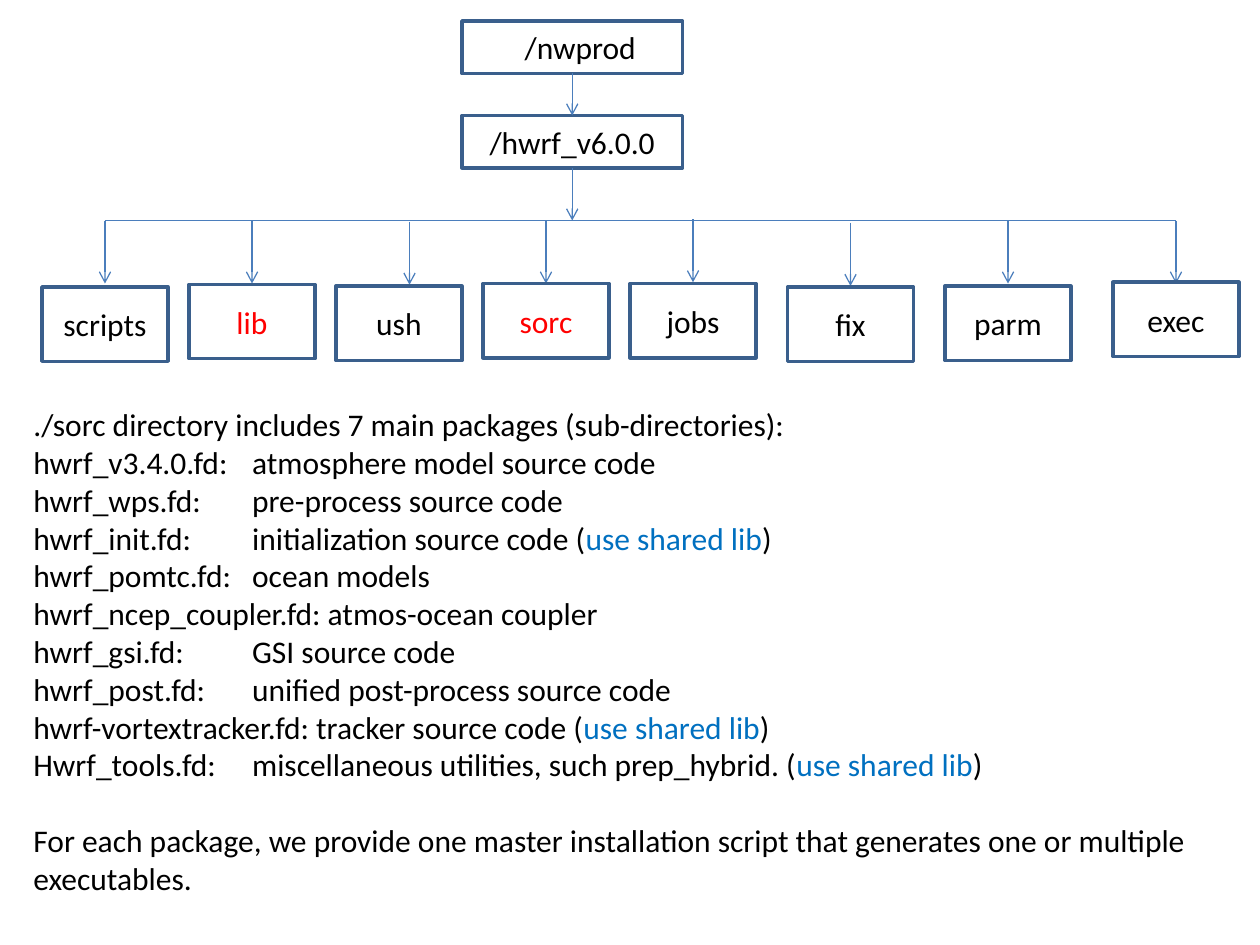
from pptx import Presentation
from pptx.enum import shapes, text
from pptx.dml.color import RGBColor
from pptx.oxml.ns import qn
from pptx.util import Pt
from lxml import etree

INK = {"text": "000000", "key": "FF0000", "note": "0070C0",
       "edge": "3A5F8C", "wire": "4B7EBC", "fill": "FFFFFF"}
FONT, SIZE, LINE = "Calibri", 18, 21.6

ROOTS = [("/nwprod", 12, 9), ("/hwrf_v6.0.0", 66, 0)]
ROOT_X, ROOT_W, ROOT_H = 327, 126, 30
BUS_Y, DROP = 126, 36
DIR_W, DIR_H = 72, 42.5
DIRS = [
    ("scripts", 60, 164, 60, 126, "text"),
    ("lib", 144, 162.5, 144, 126, "key"),
    ("ush", 228, 163.5, 234, 126.7, "text"),
    ("sorc", 312, 162, 312, 126, "key"),
    ("jobs", 396, 162, 396, 125.3, "text"),
    ("fix", 486, 164, 486, 127.4, "text"),
    ("parm", 576, 163.5, 576, 126, "text"),
    ("exec", 672, 161.3, 672, 126, "text"),
]
SHARED = "use shared lib"
INTRO = "./sorc directory includes 7 main packages (sub-directories):"
PACKS = [
    ("hwrf_v3.4.0.fd:\tatmosphere model source code", False),
    ("hwrf_wps.fd:\tpre-process source code", False),
    ("hwrf_init.fd:\tinitialization source code", True),
    ("hwrf_pomtc.fd:\tocean models", False),
    ("hwrf_ncep_coupler.fd: atmos-ocean coupler", False),
    ("hwrf_gsi.fd:\tGSI source code", False),
    ("hwrf_post.fd:\tunified post-process source code", False),
    ("hwrf-vortextracker.fd: tracker source code", True),
    ("Hwrf_tools.fd:\tmiscellaneous utilities, such prep_hybrid.", True),
]
CLOSE = ("For each package, we provide one master installation script "
         "that generates one or multiple executables.")
TAB = 125


def paint(name):
    return RGBColor.from_string(INK[name])


def style(run, color):
    run.font.name, run.font.size = FONT, Pt(SIZE)
    run.font.color.rgb = paint(color)


def add_box(slide, label, mid, top, wide, high, color="text", shift=0):
    box = slide.shapes.add_shape(shapes.MSO_SHAPE.RECTANGLE, Pt(mid - wide / 2),
                                 Pt(top), Pt(wide), Pt(high))
    box.shadow.inherit = False
    box.fill.solid()
    box.fill.fore_color.rgb = paint("fill")
    box.line.color.rgb = paint("edge")
    box.line.width = Pt(2)
    frame = box.text_frame
    frame.margin_left = Pt(7.2 + shift)
    frame.vertical_anchor = text.MSO_ANCHOR.MIDDLE
    frame.text = label
    para = frame.paragraphs[0]
    para.alignment = text.PP_ALIGN.CENTER
    style(para.runs[0], color)


def add_wire(slide, x1, y1, x2, y2, arrow=True):
    wire = slide.shapes.add_connector(shapes.MSO_CONNECTOR.STRAIGHT,
                                      Pt(x1), Pt(y1), Pt(x2), Pt(y2))
    wire.line.color.rgb = paint("wire")
    wire.line.width = Pt(0.75)
    if arrow:
        etree.SubElement(wire.line._get_or_add_ln(), qn("a:tailEnd"), type="arrow")
    etree.SubElement(wire._element.spPr, qn("a:effectLst"))


def add_tree(slide):
    for label, top, shift in ROOTS:
        add_box(slide, label, ROOT_X, top, ROOT_W, ROOT_H, shift=shift)
    ends = [top for _, top, _ in ROOTS[1:]] + [BUS_Y]
    for (_, top, _), end in zip(ROOTS, ends):
        add_wire(slide, ROOT_X, top + ROOT_H, ROOT_X, end)
    add_wire(slide, DIRS[0][3], BUS_Y, DIRS[-1][3], BUS_Y, arrow=False)
    for label, mid, top, x, y, color in DIRS:
        add_wire(slide, x, y, x, y + DROP)
        add_box(slide, label, mid, top, DIR_W, DIR_H, color)


def add_notes(slide):
    frame = slide.shapes.add_textbox(Pt(12), Pt(228), Pt(696), Pt(312)).text_frame
    frame.word_wrap = True
    rows = [[(INTRO, "text")]]
    for pack, shared in PACKS:
        rows.append([(pack + " (", "text"), (SHARED, "note"), (")", "text")]
                    if shared else [(pack, "text")])
    rows.append([(CLOSE, "text")])
    for i, row in enumerate(rows):
        para = frame.add_paragraph() if i else frame.paragraphs[0]
        for words, color in row:
            run = para.add_run()
            run.text = words
            style(run, color)
        if "\t" in row[0][0]:
            tabs = etree.SubElement(para._p.get_or_add_pPr(), qn("a:tabLst"))
            etree.SubElement(tabs, qn("a:tab"), pos=str(Pt(TAB)), algn="l")
    para.space_before = Pt(LINE)


def main():
    deck = Presentation()
    deck.slide_width, deck.slide_height = Pt(720), Pt(540)
    slide = deck.slides.add_slide(deck.slide_layouts[6])
    add_tree(slide)
    add_notes(slide)
    deck.save("out.pptx")


if __name__ == "__main__":
    main()
